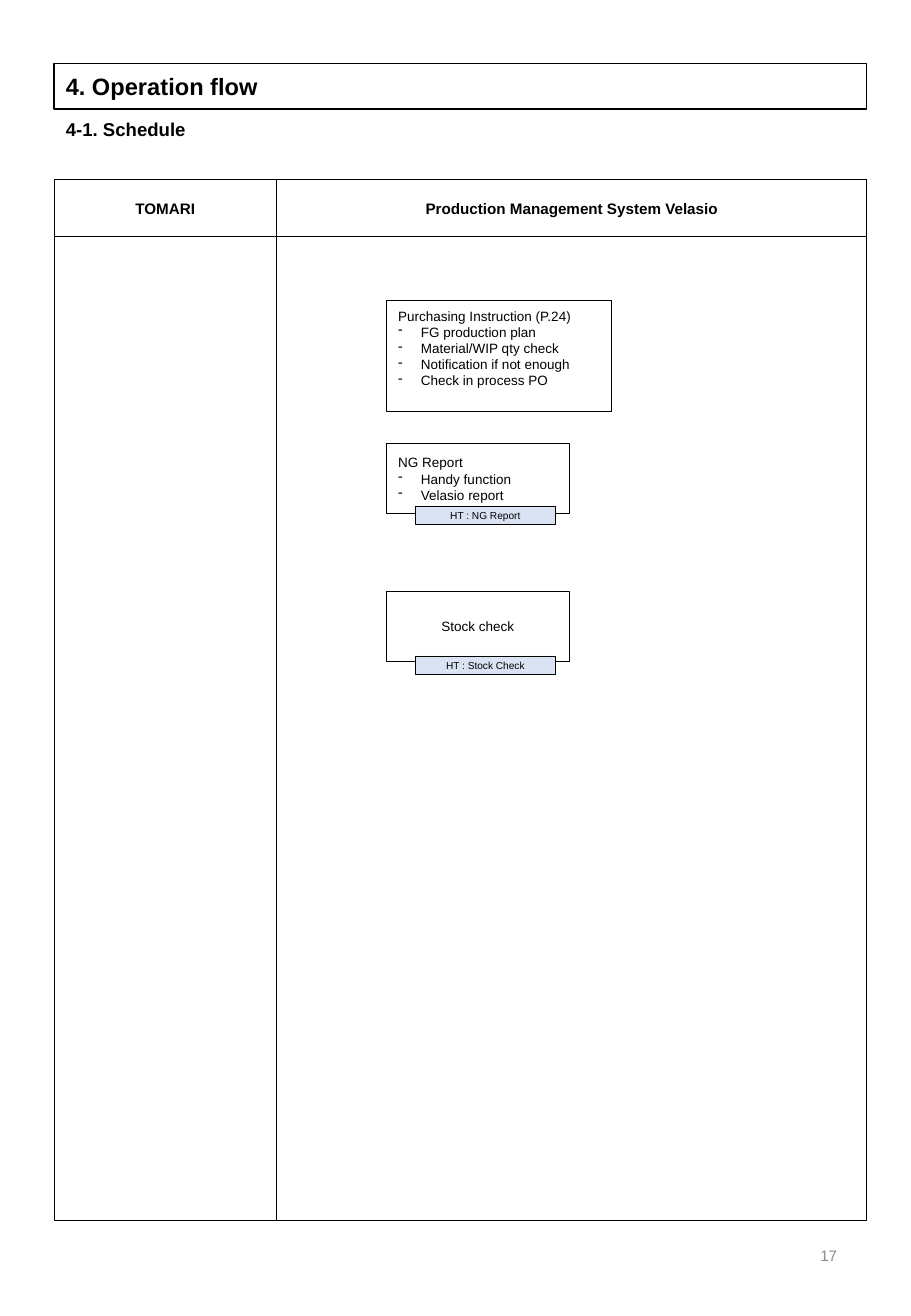
from dataclasses import dataclass
from typing import Optional

from lxml.etree import SubElement
from pptx import Presentation
from pptx.dml.color import RGBColor
from pptx.enum.shapes import MSO_CONNECTOR, MSO_SHAPE
from pptx.enum.text import MSO_ANCHOR as Anchor, PP_ALIGN as Align
from pptx.oxml.ns import qn
from pptx.util import Pt

BLACK, GREY, PALE_BLUE = "000000", "8C8C8C", "DAE3F3"
HAIRLINE = 0.25
BULLET_INDENT = 13.5


@dataclass
class Area:
    left: float
    top: float
    width: float
    height: float

    def lengths(self) -> tuple:
        return Pt(self.left), Pt(self.top), Pt(self.width), Pt(self.height)


@dataclass
class Style:
    size: float
    bold: bool = False
    align: Align = Align.LEFT
    color: str = BLACK
    anchor: Anchor = Anchor.MIDDLE


@dataclass
class Step:
    area: Area
    heading: str
    items: tuple = ()
    align: Align = Align.LEFT
    space_below: float = 3.6


def rgb(color: str) -> RGBColor:
    return RGBColor.from_string(color)


def add_bullet(paragraph) -> None:
    properties = paragraph._p.get_or_add_pPr()
    properties.set("marL", str(Pt(BULLET_INDENT)))
    properties.set("indent", str(-Pt(BULLET_INDENT)))
    SubElement(properties, qn("a:buFontTx"))
    SubElement(properties, qn("a:buChar"), char="-")


def write(shape, text: str, style: Style, items: tuple = ()) -> None:
    frame = shape.text_frame
    frame.word_wrap = True
    frame.vertical_anchor = style.anchor
    for index, line in enumerate((text, *items)):
        paragraph = frame.add_paragraph() if index else frame.paragraphs[0]
        paragraph.text = line
        paragraph.alignment = style.align
        if index:
            add_bullet(paragraph)
        font = paragraph.font
        font.name, font.size, font.bold = "Arial", Pt(style.size), style.bold
        font.color.rgb = rgb(style.color)


def add_label(slide, area: Area, text: str, style: Style) -> None:
    write(slide.shapes.add_textbox(*area.lengths()), text, style)


def add_box(slide, area: Area, line_width: float = HAIRLINE, fill: Optional[str] = None):
    box = slide.shapes.add_shape(MSO_SHAPE.RECTANGLE, *area.lengths())
    box.shadow.inherit = False
    if fill:
        box.fill.solid()
        box.fill.fore_color.rgb = rgb(fill)
    else:
        box.fill.background()
    box.line.color.rgb = rgb(BLACK)
    box.line.width = Pt(line_width)
    return box


def add_divider(slide, x: float, top: float, bottom: float) -> None:
    divider = slide.shapes.add_connector(
        MSO_CONNECTOR.STRAIGHT, Pt(x), Pt(top), Pt(x), Pt(bottom))
    divider.line.color.rgb = rgb(BLACK)
    divider.line.width = Pt(0.5)
    SubElement(divider._element.spPr, qn("a:effectLst"))


def add_step(slide, step: Step) -> None:
    box = add_box(slide, step.area)
    write(box, step.heading, Style(8, align=step.align), step.items)
    box.text_frame.margin_bottom = Pt(step.space_below)


# Page grid
LEFT, WIDTH = 31.9, 481.7
LANES_TOP, LANES_HEIGHT, HEADER_HEIGHT = 106.2, 616.7, 33.8
LANES_BOTTOM = LANES_TOP + LANES_HEIGHT
DIVIDER_X = 164
STEP_LEFT, STEP_WIDTH, STEP_HEIGHT = 228.9, 108.7, 41.6

STEPS = (
    Step(Area(STEP_LEFT, 177.9, 133.4, 65.8), "Purchasing Instruction (P.24)",
         ("FG production plan", "Material/WIP qty check",
          "Notification if not enough", "Check in process PO"),
         space_below=12.8),
    Step(Area(STEP_LEFT, 262.8, STEP_WIDTH, STEP_HEIGHT), "NG Report",
         ("Handy function", "Velasio report")),
    Step(Area(STEP_LEFT, 350.4, STEP_WIDTH, STEP_HEIGHT), "Stock check",
         align=Align.CENTER),
)
HANDY_TAGS = (("HT : NG Report", 299.8), ("HT : Stock Check", 388.7))


def main() -> None:
    deck = Presentation()
    deck.slide_width, deck.slide_height = Pt(540), Pt(779.76)
    slide = deck.slides.add_slide(deck.slide_layouts[6])

    # Headings and page number
    title = add_box(slide, Area(LEFT, 37.6, WIDTH, 27.2), line_width=1)
    write(title, "4. Operation flow", Style(14, bold=True))
    add_label(slide, Area(LEFT, 66.2, WIDTH, 20.9), "4-1. Schedule",
              Style(11, bold=True, anchor=Anchor.TOP))
    add_label(slide, Area(381.6, LANES_BOTTOM, 121.7, 41.8), "17",
              Style(9, align=Align.RIGHT, color=GREY))

    # Two lanes with their headers
    for height in (LANES_HEIGHT, HEADER_HEIGHT):
        add_box(slide, Area(LEFT, LANES_TOP, WIDTH, height))
    add_divider(slide, DIVIDER_X, LANES_TOP, LANES_BOTTOM)
    lane_headers = (
        ("TOMARI", LEFT, DIVIDER_X),
        ("Production Management System Velasio", DIVIDER_X, LEFT + WIDTH),
    )
    for name, start, end in lane_headers:
        add_label(slide, Area(start, LANES_TOP + 0.4, end - start, HEADER_HEIGHT),
                  name, Style(9, bold=True, align=Align.CENTER))

    # Steps and handy terminal tags
    for step in STEPS:
        add_step(slide, step)
    for caption, top in HANDY_TAGS:
        tag = add_box(slide, Area(246.2, top, 83, 10.8), fill=PALE_BLUE)
        write(tag, caption, Style(6, align=Align.CENTER))

    deck.save("out.pptx")


if __name__ == "__main__":
    main()
